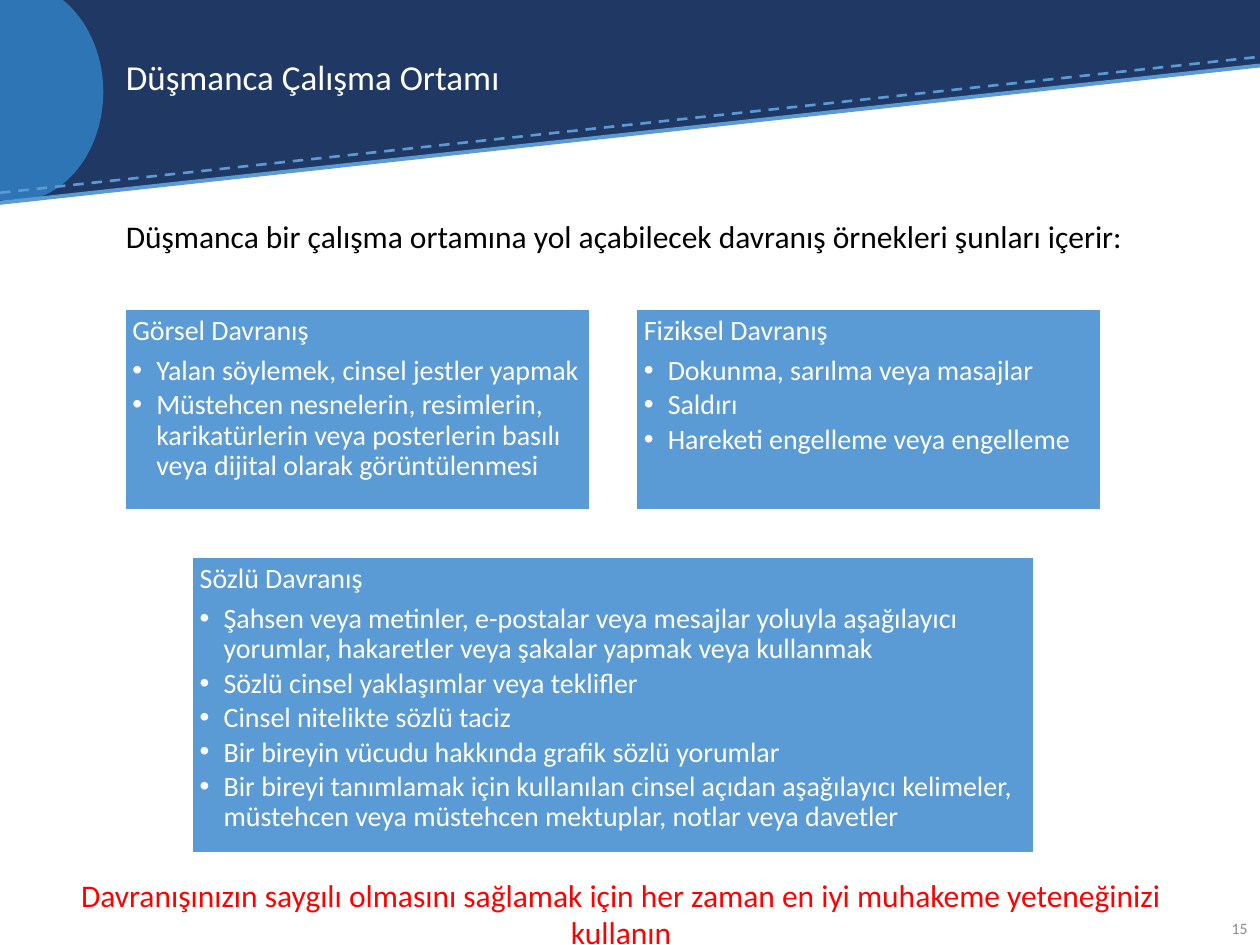
from dataclasses import dataclass

from lxml import etree
from pptx import Presentation
from pptx import util as u
from pptx.dml.color import RGBColor
from pptx.enum import dml, shapes, text
from pptx.oxml.ns import qn


@dataclass(frozen=True)
class Theme:
    font: str = "Calibri"
    navy: str = "203864"
    blue: str = "2E75B6"
    sky: str = "5B9BD5"
    white: str = "FFFFFF"
    black: str = "000000"
    red: str = "FF0000"
    grey: str = "8C8C8C"
    title: int = 20
    lead: int = 18
    body: int = 16
    small: int = 9


class Deck:
    """Draws styled elements on a slide whose grid has 100 columns and 75 rows."""

    def __init__(self, theme):
        self.theme = theme
        self.prs = Presentation()
        self.prs.slide_width, self.prs.slide_height = u.Inches(10), u.Inches(7.5)
        self.slide = self.prs.slides.add_slide(self.prs.slide_layouts[6])

    def grid(self, *cells):
        cell = self.prs.slide_width / 100
        return [round(n * cell) for n in cells]

    def shape(self, kind, box, fill, outline=None, flip=False):
        sp = self.slide.shapes.add_shape(kind, *self.grid(*box))
        sp.shadow.inherit = False
        sp.fill.solid()
        sp.fill.fore_color.rgb = RGBColor.from_string(fill)
        if outline:
            sp.line.color.rgb = RGBColor.from_string(outline)
            sp.line.width = u.Pt(1)
        else:
            sp.line.fill.background()
        if flip:
            sp._element.spPr.get_or_add_xfrm().set("flipV", "1")
        return sp

    def line(self, start, end, width, dash=None):
        cx = self.slide.shapes.add_connector(
            shapes.MSO_CONNECTOR.STRAIGHT, *self.grid(*start, *end))
        cx.line.color.rgb = RGBColor.from_string(self.theme.sky)
        cx.line.width = u.Pt(width)
        if dash:
            cx.line.dash_style = dash
        etree.SubElement(cx._element.spPr, qn("a:effectLst"))

    def run(self, p, words, size, color):
        r = p.add_run()
        r.text = words
        r.font.name, r.font.size = self.theme.font, u.Pt(size)
        r.font.color.rgb = RGBColor.from_string(color)

    def label(self, box, words, size, color, align=text.PP_ALIGN.LEFT,
              anchor=text.MSO_ANCHOR.TOP, spacing=1.0):
        tf = self.slide.shapes.add_textbox(*self.grid(*box)).text_frame
        tf.word_wrap, tf.vertical_anchor = True, anchor
        p = tf.paragraphs[0]
        p.alignment, p.line_spacing = align, spacing
        self.run(p, words, size, color)

    def bullet(self, p):
        ppr = p._p.get_or_add_pPr()
        indent = u.Inches(0.19)
        ppr.set("marL", str(indent))
        ppr.set("indent", str(-indent))
        etree.SubElement(ppr, qn("a:buFont"), typeface="Arial")
        etree.SubElement(ppr, qn("a:buChar"), char="•")

    def panel(self, box, heading, items):
        t = self.theme
        tf = self.shape(shapes.MSO_SHAPE.RECTANGLE, box, t.sky, t.white).text_frame
        tf.word_wrap, tf.vertical_anchor = True, text.MSO_ANCHOR.TOP
        tf.margin_left, tf.margin_right = u.Inches(0.06), u.Inches(0.03)
        tf.margin_top = tf.margin_bottom = u.Inches(0.06)
        for i, words in enumerate([heading, *items]):
            p = tf.add_paragraph() if i else tf.paragraphs[0]
            if i:
                self.bullet(p)
            p.alignment = text.PP_ALIGN.LEFT
            p.line_spacing = 0.9
            p.space_after = u.Pt(t.body * (0.15 if i else 0.35))
            self.run(p, words, t.body, t.white)


def main():
    t = Theme()
    s = Deck(t)
    kinds, align, middle = shapes.MSO_SHAPE, text.PP_ALIGN, text.MSO_ANCHOR.MIDDLE

    s.shape(kinds.RECTANGLE, (0, 0, 100, 5.2), t.navy)
    s.shape(kinds.RIGHT_TRIANGLE, (0, 5.1, 100, 10.9), t.navy, flip=True)
    s.shape(kinds.OVAL, (-5.9, -1.4, 14.1, 17.4), t.blue)
    s.line((0, 15.3), (100, 4.5), 1.5, dml.MSO_LINE.DASH)
    s.line((0, 16.1), (100, 5.2), 2.25)

    s.label((9, 2, 80.5, 8.6), "Düşmanca Çalışma Ortamı", t.title, t.white,
            anchor=middle, spacing=0.9)
    s.label((94.7, 71.7, 5.3, 4), "15", t.small, t.grey, align.RIGHT, middle)
    s.label((4.1, 69, 90.4, 7),
            "Davranışınızın saygılı olmasını sağlamak için her zaman en iyi "
            "muhakeme yeteneğinizi kullanın", t.lead, t.red, align.CENTER)
    s.label((9, 16.7, 85.8, 7),
            "Düşmanca bir çalışma ortamına yol açabilecek davranış örnekleri "
            "şunları içerir:", t.lead, t.black)

    left, top, width, height, gap = 9.9, 24.5, 36.9, 16, 3.7
    pair = [
        ("Görsel Davranış", [
            "Yalan söylemek, cinsel jestler yapmak",
            "Müstehcen nesnelerin, resimlerin, karikatürlerin veya posterlerin "
            "basılı veya dijital olarak görüntülenmesi"]),
        ("Fiziksel Davranış", [
            "Dokunma, sarılma veya masajlar",
            "Saldırı",
            "Hareketi engelleme veya engelleme"]),
    ]
    for col, (heading, items) in enumerate(pair):
        s.panel((left + col * (width + gap), top, width, height), heading, items)

    wide = 66.8
    centre = left + width + gap / 2
    s.panel((centre - wide / 2, top + height + gap, wide, 23.5), "Sözlü Davranış", [
        "Şahsen veya metinler, e-postalar veya mesajlar yoluyla aşağılayıcı "
        "yorumlar, hakaretler veya şakalar yapmak veya kullanmak",
        "Sözlü cinsel yaklaşımlar veya teklifler",
        "Cinsel nitelikte sözlü taciz",
        "Bir bireyin vücudu hakkında grafik sözlü yorumlar",
        "Bir bireyi tanımlamak için kullanılan cinsel açıdan aşağılayıcı "
        "kelimeler, müstehcen veya müstehcen mektuplar, notlar veya davetler"])

    s.prs.save("out.pptx")


if __name__ == "__main__":
    main()
